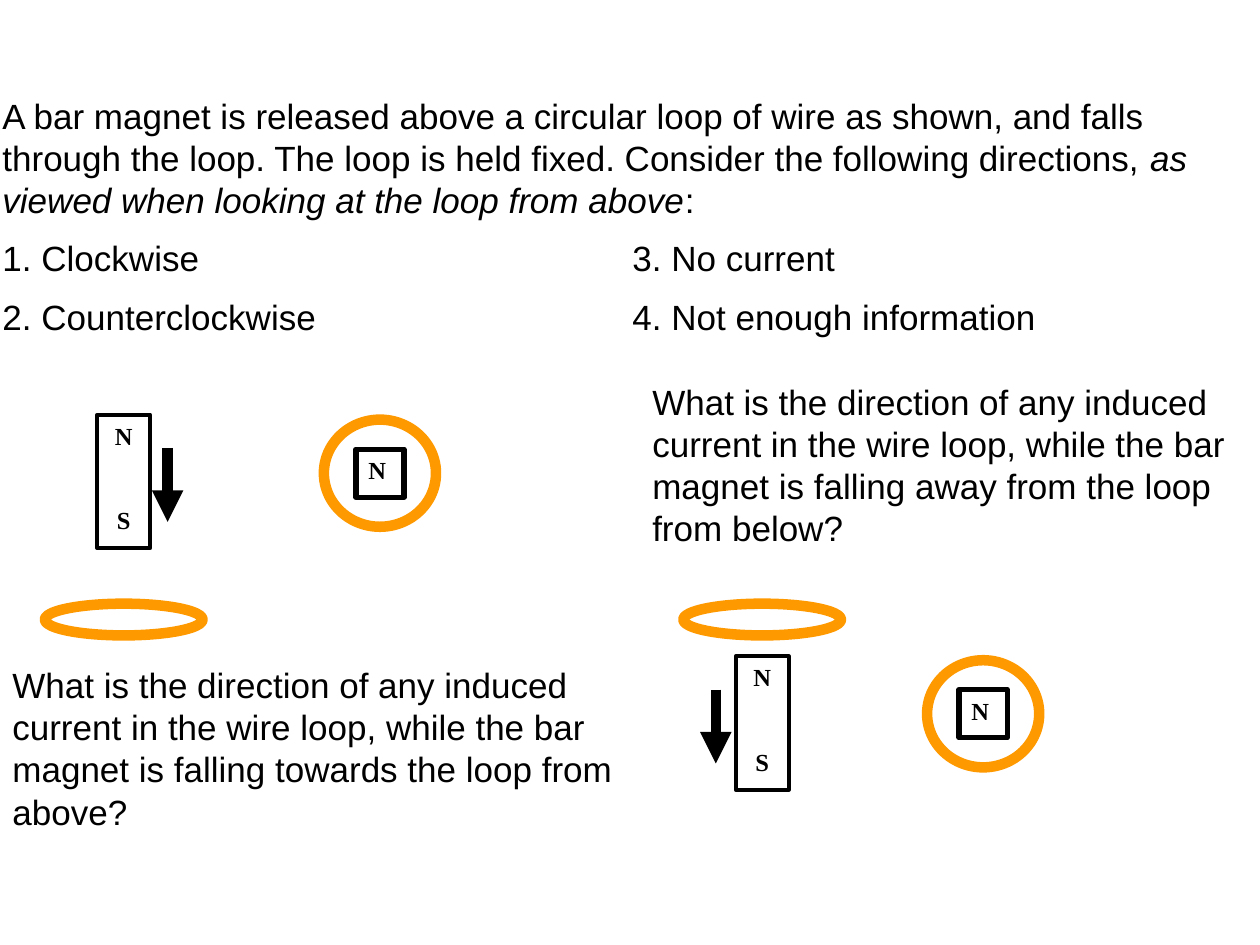
from lxml import etree
from pptx import Presentation
from pptx.dml.color import RGBColor
from pptx.enum.shapes import MSO_CONNECTOR, MSO_SHAPE
from pptx.enum.text import MSO_ANCHOR, PP_ALIGN
from pptx.oxml.ns import qn
from pptx.util import Cm, Pt

OVAL, RECT = MSO_SHAPE.OVAL, MSO_SHAPE.RECTANGLE
LINE = MSO_CONNECTOR.STRAIGHT
LEFT, MID = PP_ALIGN.LEFT, PP_ALIGN.CENTER
TOP = MSO_ANCHOR.TOP

THEME = {
    "ink": RGBColor(0, 0, 0),
    "wire": RGBColor(0xFF, 0x99, 0x00),
    "body": {"font": "Arial", "size": 20},
    "pole": {"font": "Times New Roman", "size": 14, "bold": True},
    "thick": 6, "frame": 3, "thin": 2.25,
}

# Each paragraph is a list of (text, italic) runs
INTRO = [
    [("A bar magnet is released above a circular loop of wire as shown, and falls "
      "through the loop. The loop is held fixed. Consider the following directions, ", False),
     ("as viewed when looking at the loop from above", True),
     (":", False)],
    [("1. Clockwise\t3. No current", False)],
    [("2. Counterclockwise\t4. Not enough information", False)],
]
ASK = ("What is the direction of any induced current in the wire loop, "
       "while the bar magnet is falling {} the loop from {}?")
# Lengths in cm: question place, magnet place, arrow x, top view place
SCENES = [
    {"way": ("towards", "above"), "ask": (0, 13.26),
     "magnet": (1.96, 8.36), "arrow": 3.38, "view": (6.53, 8.46)},
    {"way": ("away from", "below"), "ask": (12.9, 7.54),
     "magnet": (14.83, 13.23), "arrow": 14.43, "view": (18.69, 13.31)},
]
LOOP_Y = 12.17
LOOP_W, LOOP_H = 3.18, 0.64
BAR_W, BAR_H = 1.07, 2.69
RING_W, RING_H = 2.26, 2.16
SQUARE = 0.97
DROP, FALL = 0.67, 1.49
INTRO_GAP, POLE_GAP = 9.3, 31.5
TAB = 12.7


def write(shape, paras, font, size, bold=False, align=LEFT, gap=0, tab=None):
    frame = shape.text_frame
    frame.word_wrap = True
    frame.vertical_anchor = TOP
    for i, runs in enumerate(paras):
        para = frame.add_paragraph() if i else frame.paragraphs[0]
        para.alignment = align
        para.space_before = Pt(gap if i else 0)
        if tab:
            stops = etree.SubElement(para._p.get_or_add_pPr(), qn("a:tabLst"))
            etree.SubElement(stops, qn("a:tab"), pos=str(Cm(tab)), algn="l")
        for text, slant in runs:
            run = para.add_run()
            run.text = text
            run.font.name, run.font.size = font, Pt(size)
            run.font.bold, run.font.italic = bold, slant
            run.font.color.rgb = THEME["ink"]


def label(shapes, x, y, w, h, paras, **style):
    box = shapes.add_textbox(Cm(x), Cm(y), Cm(w), Cm(h))
    write(box, paras, **THEME["body"], **style)


def outline(shapes, kind, x, y, w, h, color, width):
    shape = shapes.add_shape(kind, Cm(x), Cm(y), Cm(w), Cm(h))
    shape.shadow.inherit = False
    shape.fill.background()
    shape.line.color.rgb = THEME[color]
    shape.line.width = Pt(THEME[width])
    return shape


def arrow(shapes, x, y):
    line = shapes.add_connector(LINE, Cm(x), Cm(y), Cm(x), Cm(y + FALL))
    line.line.color.rgb = THEME["ink"]
    line.line.width = Pt(THEME["thick"])
    etree.SubElement(line.line._get_or_add_ln(), qn("a:tailEnd"), type="triangle")
    etree.SubElement(line._element.spPr, qn("a:effectLst"))


def side_view(shapes, x, y, arrow_x):
    outline(shapes, OVAL, x + (BAR_W - LOOP_W) / 2, LOOP_Y, LOOP_W, LOOP_H,
            "wire", "thick")
    bar = outline(shapes, RECT, x, y, BAR_W, BAR_H, "ink", "thin")
    write(bar, [[("N", False)], [("S", False)]], **THEME["pole"],
          align=MID, gap=POLE_GAP)
    arrow(shapes, arrow_x, y + DROP)


def top_view(shapes, x, y):
    group = shapes.add_group_shape().shapes
    outline(group, OVAL, x, y, RING_W, RING_H, "wire", "thick")
    end = outline(group, RECT, x + (RING_W - SQUARE) / 2, y + (RING_H - SQUARE) / 2,
                  SQUARE, SQUARE, "ink", "frame")
    write(end, [[("N", False)]], **THEME["pole"])


def main():
    deck = Presentation()
    deck.slide_width, deck.slide_height = Cm(25.4), Cm(19.05)
    shapes = deck.slides.add_slide(deck.slide_layouts[6]).shapes
    label(shapes, -0.2, 1.78, 25.4, 5.38, INTRO, gap=INTRO_GAP, tab=TAB)
    for scene in SCENES:
        side_view(shapes, *scene["magnet"], scene["arrow"])
        top_view(shapes, *scene["view"])
        label(shapes, *scene["ask"], 13.13, 3.68,
              [[(ASK.format(*scene["way"]), False)]])
    deck.save("out.pptx")


if __name__ == "__main__":
    main()
